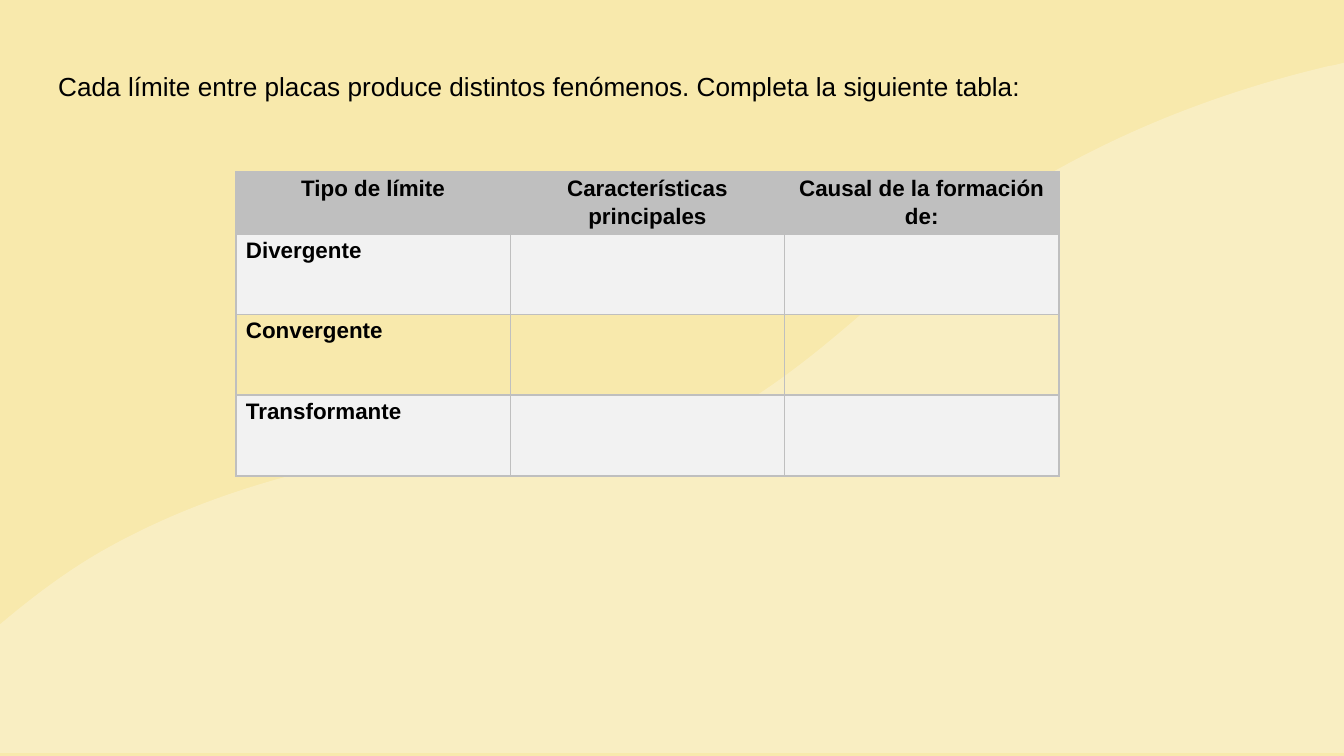
"""Build a slide with a table about plate boundaries to fill in."""
from lxml.etree import SubElement, fromstring
from pptx import Presentation
from pptx.dml.color import RGBColor
from pptx.enum.text import MSO_ANCHOR, PP_ALIGN
from pptx.oxml.ns import qn
from pptx.util import Pt

PX = 914400 / 134.4
NS = "http://schemas.openxmlformats.org/drawingml/2006/main"

PROMPT = "Cada límite entre placas produce distintos fenómenos. Completa la siguiente tabla:"
ROWS = [
    ("Tipo de límite", "Características principales", "Causal de la formación de:"),
    ("Divergente", "", ""),
    ("Convergente", "", ""),
    ("Transformante", "", ""),
]
ROW_FILLS = ["BFBFBF", "F2F2F2", None, "F2F2F2"]
PROMPT_BOX = (45, 59, 1167, 47)
TABLE_BOX = (236, 172, 823, 304)
HEADER_H = 62
WAVE_START = (1347, 62)
WAVE_BOTTOM = 753
WAVE = [
    ((1342, 63), (1337, 65), (1329, 66)),
    ((1181, 101), (1040, 164), (923, 261)),
    ((867, 308), (814, 359), (751, 399)),
    ((688, 438), (614, 445), (540, 448)),
    ((462, 449), (387, 454), (312, 470)),
    ((239, 488), (169, 513), (102, 551)),
    ((62, 574), (26, 602), (-9, 632)),
]


def px(n):
    return round(n * PX)


def rgb(value):
    return RGBColor.from_string(value)


def write(tf, text, size, bold=False, align=PP_ALIGN.LEFT):
    tf.text = text
    p = tf.paragraphs[0]
    p.alignment, p.line_spacing, p.space_after = align, 1.15, Pt(10)
    for r in p.runs:
        r.font.name, r.font.size, r.font.bold = "Arial", Pt(size), bold
        r.font.color.rgb = rgb("000000")


def add_wave(s):
    points = [point for curve in WAVE for point in curve]
    points += [(x, WAVE_BOTTOM) for x in (points[-1][0], WAVE_START[0])]
    fb = s.shapes.build_freeform(*WAVE_START, scale=PX)
    fb.add_line_segments(points, close=True)
    sp = fb.convert_to_shape()
    lines = list(sp._element.iter(qn("a:lnTo")))
    for i in range(0, 3 * len(WAVE), 3):
        curve = fromstring(f'<a:cubicBezTo xmlns:a="{NS}"/>')
        lines[i].addprevious(curve)
        for line in lines[i:i + 3]:
            curve.append(line[0])
            line.getparent().remove(line)
    sp.shadow.inherit = False
    sp.line.fill.background()
    sp.fill.solid()
    sp.fill.fore_color.rgb = rgb("FFFFFF")
    color = next(sp.fill._xPr.iter(qn("a:srgbClr")))
    SubElement(color, qn("a:alpha"), val="27000")


def add_prompt(s):
    tf = s.shapes.add_textbox(*map(px, PROMPT_BOX)).text_frame
    tf.word_wrap = True
    write(tf, PROMPT, 14)


def set_borders(cell, color):
    tcPr = cell._tc.get_or_add_tcPr()
    for i, side in enumerate("LRTB"):
        tcPr.insert(i, fromstring(
            f'<a:ln{side} xmlns:a="{NS}" w="12700"><a:solidFill>'
            f'<a:srgbClr val="{color}"/></a:solidFill></a:ln{side}>'))


def add_table(s):
    table = s.shapes.add_table(len(ROWS), len(ROWS[0]), *map(px, TABLE_BOX)).table
    table.first_row = table.horz_banding = False
    body_h = (TABLE_BOX[3] - HEADER_H) / (len(ROWS) - 1)
    for i, (texts, fill) in enumerate(zip(ROWS, ROW_FILLS)):
        table.rows[i].height = px(body_h if i else HEADER_H)
        for cell, text in zip(table.rows[i].cells, texts):
            cell.margin_left = cell.margin_right = px(10)
            cell.margin_top = cell.margin_bottom = 0
            cell.vertical_anchor = MSO_ANCHOR.TOP
            if text:
                write(cell.text_frame, text, 12, True, PP_ALIGN.LEFT if i else PP_ALIGN.CENTER)
            if fill:
                cell.fill.solid()
                cell.fill.fore_color.rgb = rgb(fill)
            else:
                cell.fill.background()
            set_borders(cell, "BFBFBF")


def main():
    prs = Presentation()
    prs.slide_width, prs.slide_height = px(1344), px(756)
    s = prs.slides.add_slide(prs.slide_layouts[6])
    s.background.fill.solid()
    s.background.fill.fore_color.rgb = rgb("F8E9AC")
    add_wave(s)
    add_prompt(s)
    add_table(s)
    prs.save("out.pptx")


if __name__ == "__main__":
    main()
